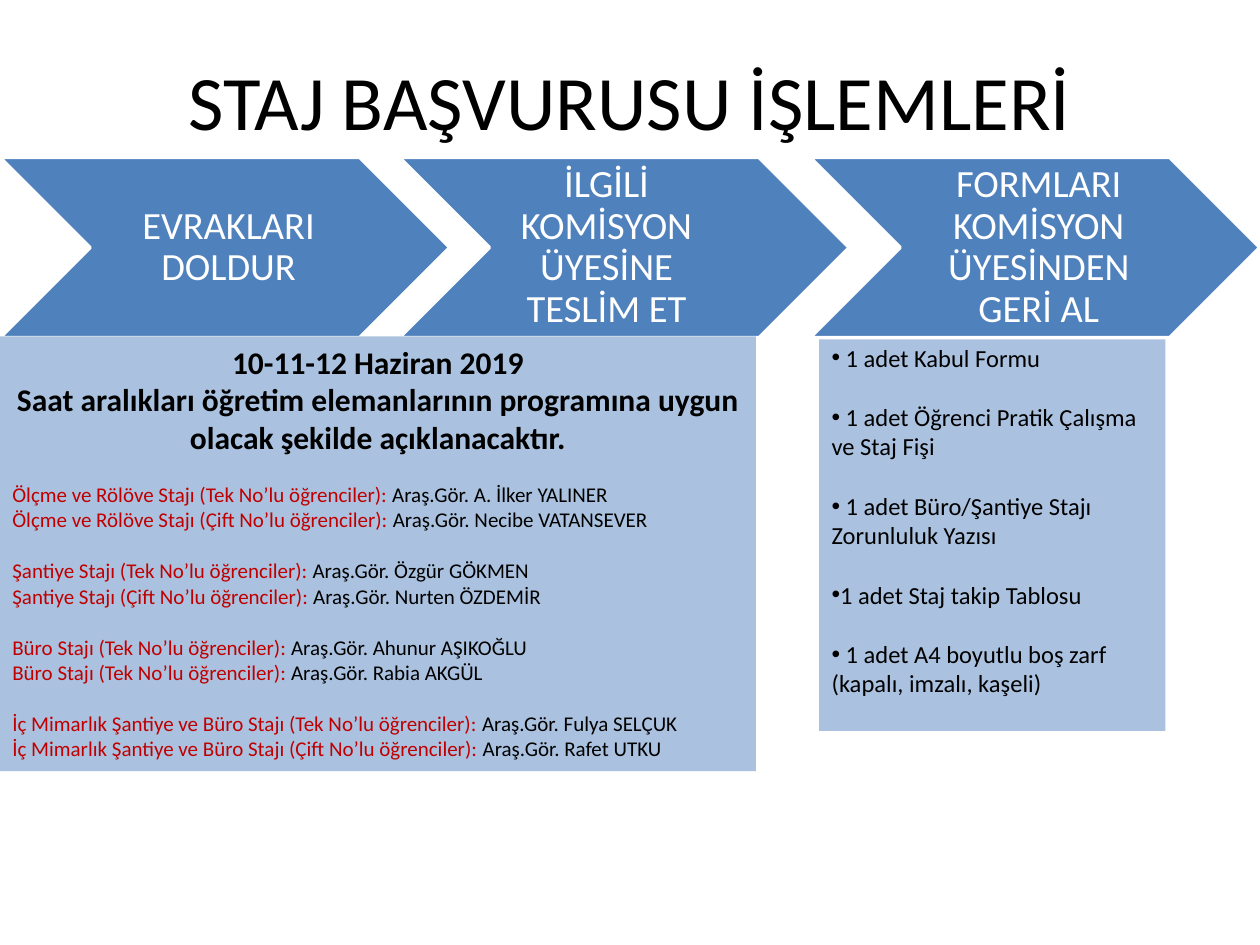
from pptx import Presentation
from pptx.dml.color import RGBColor as Rgb
from pptx.enum.shapes import MSO_SHAPE as Kind
from pptx.enum.text import MSO_ANCHOR as Anchor, MSO_AUTO_SIZE as Fit, PP_ALIGN as Align
from pptx.oxml.ns import qn
from pptx.util import Inches, Pt
from lxml.etree import SubElement as Sub

HUE = {"blue": "4F81BD", "red": "C00000", "black": "000000", "white": "FFFFFF"}
WIDE, HIGH = 10, 7.5
TOP, ROW = 1.25, 1.43
BASE = 2.67
STEPS = [
    (0, 0.71, "EVRAKLARI DOLDUR"),
    (3.17, 3.71, "İLGİLİ KOMİSYON ÜYESİNE TESLİM ET"),
    (6.43, 7.14, "FORMLARI KOMİSYON ÜYESİNDEN GERİ AL"),
]
HEADS = [
    "10-11-12 Haziran 2019",
    "Saat aralıkları öğretim elemanlarının programına uygun olacak şekilde açıklanacaktır.",
]
STAFF = [
    ("Ölçme ve Rölöve Stajı", ("Tek", "A. İlker YALINER"), ("Çift", "Necibe VATANSEVER")),
    ("Şantiye Stajı", ("Tek", "Özgür GÖKMEN"), ("Çift", "Nurten ÖZDEMİR")),
    ("Büro Stajı", ("Tek", "Ahunur AŞIKOĞLU"), ("Tek", "Rabia AKGÜL")),
    ("İç Mimarlık Şantiye ve Büro Stajı", ("Tek", "Fulya SELÇUK"), ("Çift", "Rafet UTKU")),
]
FORMS = [
    " 1 adet Kabul Formu",
    " 1 adet Öğrenci Pratik Çalışma ve Staj Fişi",
    " 1 adet Büro/Şantiye Stajı Zorunluluk Yazısı",
    "1 adet Staj takip Tablosu",
    " 1 adet A4 boyutlu boş zarf (kapalı, imzalı, kaşeli)",
]


def place(shape, x, y, w, h):
    """Move and size a shape in inches."""
    shape.left, shape.top, shape.width, shape.height = map(Inches, (x, y, w, h))


def write(frame, *runs, size=12, bold=False, align=Align.LEFT, gap=0, lead=1.0, dot=None):
    """Add one paragraph of (text, hue) runs, filling the first one if empty."""
    first = frame.paragraphs[0]
    para = frame.add_paragraph() if first.runs else first
    para.alignment, para.line_spacing = align, lead
    para.space_before, para.space_after = Pt(gap), Pt(0)
    if dot:
        props = para._p.get_or_add_pPr()
        props.set("marL", "0")
        props.set("indent", "0")
        Sub(props, qn("a:buChar"), char=dot)
    for text, hue in runs:
        run = para.add_run()
        run.text = text
        font = run.font
        font.name, font.size, font.bold = "Calibri", Pt(size), bold
        font.color.rgb = Rgb.from_string(HUE[hue])


def paint(shape, alpha=None):
    """Fill a shape blue, optionally see-through."""
    shape.fill.solid()
    shape.fill.fore_color.rgb = Rgb.from_string(HUE["blue"])
    if alpha:
        Sub(shape.fill._xPr.find(".//" + qn("a:srgbClr")), qn("a:alpha"), val=str(alpha * 1000))


def step(slide, x, left, label):
    """Draw one chevron and its label."""
    arrow = slide.shapes.add_shape(Kind.CHEVRON, 0, 0, 0, 0)
    place(arrow, x, TOP, 3.57, ROW)
    paint(arrow)
    arrow.shadow.inherit = False
    arrow.line.color.rgb = Rgb.from_string(HUE["white"])
    arrow.line.width = Pt(2)
    box = slide.shapes.add_textbox(0, 0, 0, 0)
    place(box, left, TOP, 2.14, ROW)
    frame = box.text_frame
    frame.word_wrap, frame.vertical_anchor = True, Anchor.MIDDLE
    frame.margin_left = Inches(0.1)
    frame.margin_right = frame.margin_top = frame.margin_bottom = Inches(0.03)
    write(frame, (label, "white"), size=22, align=Align.CENTER, lead=0.9)


def panel(shape, *area):
    """Style a pale panel and return its text frame."""
    place(shape, *area)
    paint(shape, 48)
    shape.line.fill.background()
    frame = shape.text_frame
    frame.word_wrap, frame.auto_size = True, Fit.NONE
    frame.vertical_anchor = Anchor.TOP
    return frame


def staff(slide):
    """Fill the panel of dates and staff."""
    shape = slide.shapes.add_shape(Kind.RECTANGLE, 0, 0, 0, 0)
    shape.shadow.inherit = False
    frame = panel(shape, 0, BASE, 0.6 * WIDE, 3.45)
    for head in HEADS:
        write(frame, (head, "black"), size=18, bold=True, align=Align.CENTER)
    for name, *pair in STAFF:
        for i, (group, who) in enumerate(pair):
            write(frame, (f"{name} ({group} No’lu öğrenciler): ", "red"),
                  (f"Araş.Gör. {who}", "black"), gap=0 if i else 14.7)


def main():
    """Build and save the slide."""
    deck = Presentation()
    deck.slide_width, deck.slide_height = Inches(WIDE), Inches(HIGH)
    slide = deck.slides.add_slide(deck.slide_layouts[1])
    title, body = slide.placeholders
    place(title, 0.05 * WIDE, 0.17, 0.9 * WIDE, 1.25)
    write(title.text_frame, ("STAJ BAŞVURUSU İŞLEMLERİ", "black"), size=44, align=Align.CENTER)
    for item in STEPS:
        step(slide, *item)
    staff(slide)
    frame = panel(body, 0.65 * WIDE, BASE, 2.75, 3.13)
    for i, form in enumerate(FORMS):
        write(frame, (form, "black"), size=14, gap=17.1 if i else 0, dot="•")
    deck.save("out.pptx")


if __name__ == "__main__":
    main()
